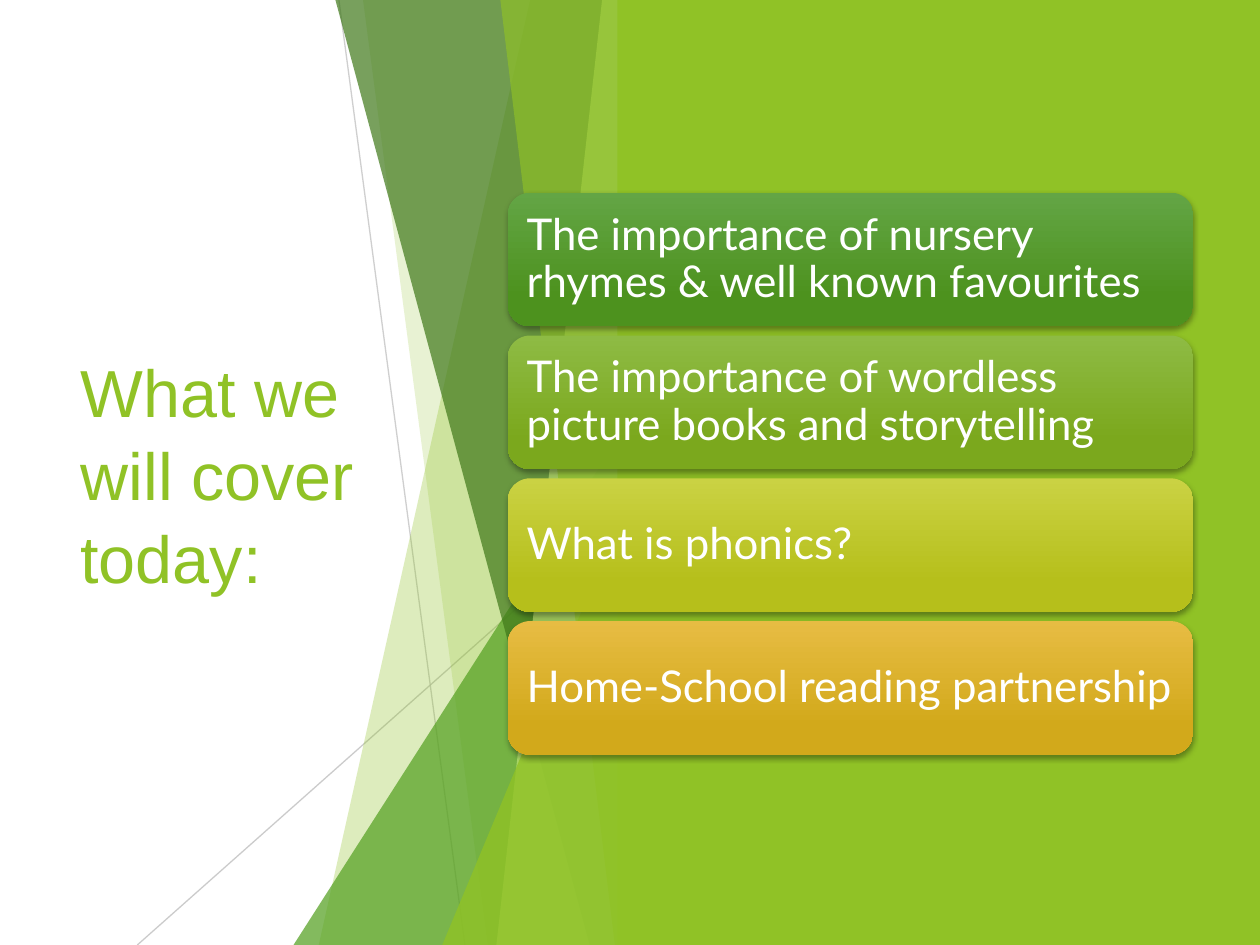
"""Build the agenda slide: a title beside faceted bands and four topic cards."""
from dataclasses import dataclass

from lxml import etree
from pptx import Presentation
from pptx import util as u
from pptx.dml.color import RGBColor
from pptx.enum import shapes, text
from pptx.oxml import ns

LIME = RGBColor(0x90, 0xC2, 0x26)
GREEN = RGBColor(0x54, 0xA0, 0x21)
FOREST = RGBColor(0x3F, 0x78, 0x19)
PALE_LIME = RGBColor(0xC0, 0xE4, 0x74)
GREY = RGBColor(0xBF, 0xBF, 0xBF)
WHITE = RGBColor(0xFF, 0xFF, 0xFF)
BLACK = RGBColor(0x00, 0x00, 0x00)

WIDTH, HEIGHT = 10, 7.5
FACET_TOP, FACET_RIGHT = -0.01, 5
PANEL_LEFT = 4.9
CARD_LEFT, CARD_TOP, CARD_WIDTH, CARD_HEIGHT = 4.03, 1.53, 5.44, 1.06
CARD_PITCH = 3.4 / 3


@dataclass(frozen=True)
class Ray:
    start: tuple[float, float]
    end: tuple[float, float]
    opacity: int


@dataclass(frozen=True)
class Facet:
    top_x: float
    bottom_x: float
    color: RGBColor
    opacity: int


@dataclass(frozen=True)
class Wedge:
    left: float
    top: float
    color: RGBColor
    opacity: int


@dataclass(frozen=True)
class Card:
    label: str
    light: RGBColor
    dark: RGBColor


RAYS = [
    Ray((2.69, 0), (3.69, HEIGHT), 75),
    Ray((5, 4.03), (1.09, HEIGHT), 80),
]
BANDS = [
    Facet(4.21, 2.53, LIME, 30),
    Facet(2.88, 3.87, LIME, 20),
    Wedge(2.33, 3.33, GREEN, 72),
    Facet(2.66, 4.68, FOREST, 70),
    Facet(4.78, 3.94, PALE_LIME, 70),
    Facet(3.97, 4.88, LIME, 65),
    Wedge(3.51, 3.93, LIME, 80),
]
CARDS = [
    Card("The importance of nursery rhymes & well known favourites",
         RGBColor(0x63, 0xA5, 0x45), RGBColor(0x4D, 0x92, 0x1E)),
    Card("The importance of wordless picture books and storytelling",
         RGBColor(0x8E, 0xBB, 0x44), RGBColor(0x7B, 0xA8, 0x1D)),
    Card("What is phonics?",
         RGBColor(0xCA, 0xD2, 0x43), RGBColor(0xB6, 0xBF, 0x1B)),
    Card("Home-School reading partnership",
         RGBColor(0xE7, 0xBC, 0x43), RGBColor(0xD2, 0xA9, 0x1B)),
]


def set_opacity(properties, percent: int) -> None:
    color = next(properties.iter(ns.qn("a:srgbClr")))
    etree.SubElement(color, ns.qn("a:alpha"), val=str(percent * 1000))


def paint(shape, color: RGBColor, opacity: int = 100) -> None:
    shape.shadow.inherit = False
    shape.fill.solid()
    shape.fill.fore_color.rgb = color
    shape.line.fill.background()
    if opacity < 100:
        set_opacity(shape._element.spPr, opacity)


def add_shadow(shape) -> None:
    shape.shadow.inherit = False
    effects = shape._element.spPr.find(ns.qn("a:effectLst"))
    shadow = etree.SubElement(
        effects, ns.qn("a:outerShdw"), blurRad=str(u.Pt(3)), dist=str(u.Pt(2)),
        dir=str(90 * 60000), algn="ctr", rotWithShape="0")
    etree.SubElement(shadow, ns.qn("a:srgbClr"), val=str(BLACK))
    set_opacity(shadow, 35)


def write(frame, content: str, font: str, size: int, color: RGBColor, spacing: float) -> None:
    frame.word_wrap = True
    frame.vertical_anchor = text.MSO_ANCHOR.MIDDLE
    paragraph = frame.paragraphs[0]
    paragraph.alignment = text.PP_ALIGN.LEFT
    paragraph.line_spacing = spacing
    run = paragraph.add_run()
    run.text = content
    run.font.name = font
    run.font.size = u.Pt(size)
    run.font.color.rgb = color


def draw_ray(slide, ray: Ray) -> None:
    points = [u.Inches(value) for value in ray.start + ray.end]
    connector = slide.shapes.add_connector(shapes.MSO_CONNECTOR.STRAIGHT, *points)
    connector.line.color.rgb = GREY
    connector.line.width = u.Pt(0.75)
    properties = connector._element.spPr
    set_opacity(properties, ray.opacity)
    etree.SubElement(properties, ns.qn("a:effectLst"))


def draw_facet(slide, facet: Facet) -> None:
    corners = [(facet.top_x, FACET_TOP), (FACET_RIGHT, FACET_TOP),
               (FACET_RIGHT, HEIGHT), (facet.bottom_x, HEIGHT)]
    points = [(u.Inches(x), u.Inches(y)) for x, y in corners]
    builder = slide.shapes.build_freeform(*points[0])
    builder.add_line_segments(points[1:], close=True)
    paint(builder.convert_to_shape(), facet.color, facet.opacity)


def draw_wedge(slide, wedge: Wedge) -> None:
    shape = slide.shapes.add_shape(
        shapes.MSO_SHAPE.ISOSCELES_TRIANGLE, u.Inches(wedge.left), u.Inches(wedge.top),
        u.Inches(FACET_RIGHT - wedge.left), u.Inches(HEIGHT - wedge.top))
    shape.adjustments[0] = 1
    paint(shape, wedge.color, wedge.opacity)


def draw_card(slide, card: Card, top: float) -> None:
    shape = slide.shapes.add_shape(
        shapes.MSO_SHAPE.ROUNDED_RECTANGLE, u.Inches(CARD_LEFT), u.Inches(top),
        u.Inches(CARD_WIDTH), u.Inches(CARD_HEIGHT))
    shape.line.fill.background()
    shape.fill.gradient()
    shape.fill.gradient_angle = 270
    stops = zip(shape.fill.gradient_stops, (0, 0.78), (card.light, card.dark))
    for stop, position, color in stops:
        stop.position = position
        stop.color.rgb = color
    add_shadow(shape)
    frame = shape.text_frame
    frame.margin_left = frame.margin_right = u.Inches(0.1)
    frame.margin_top = frame.margin_bottom = u.Inches(0.1)
    write(frame, card.label, "Lato", 25, WHITE, 0.9)


def main() -> None:
    presentation = Presentation()
    presentation.slide_width = u.Inches(WIDTH)
    presentation.slide_height = u.Inches(HEIGHT)
    slide = presentation.slides.add_slide(presentation.slide_layouts[6])

    title = slide.shapes.add_textbox(
        u.Inches(0.54), u.Inches(1.51), u.Inches(2.91), u.Inches(4.48))
    write(title.text_frame, "What we will cover today:", "Arial", 38, LIME, 1.04)

    for ray in RAYS:
        draw_ray(slide, ray)
    for band in BANDS:
        if isinstance(band, Wedge):
            draw_wedge(slide, band)
        else:
            draw_facet(slide, band)

    panel = slide.shapes.add_shape(
        shapes.MSO_SHAPE.RECTANGLE, u.Inches(PANEL_LEFT), u.Inches(0),
        u.Inches(WIDTH - PANEL_LEFT), u.Inches(HEIGHT))
    paint(panel, LIME)

    for index, card in enumerate(CARDS):
        draw_card(slide, card, CARD_TOP + index * CARD_PITCH)
    presentation.save("out.pptx")


if __name__ == "__main__":
    main()
